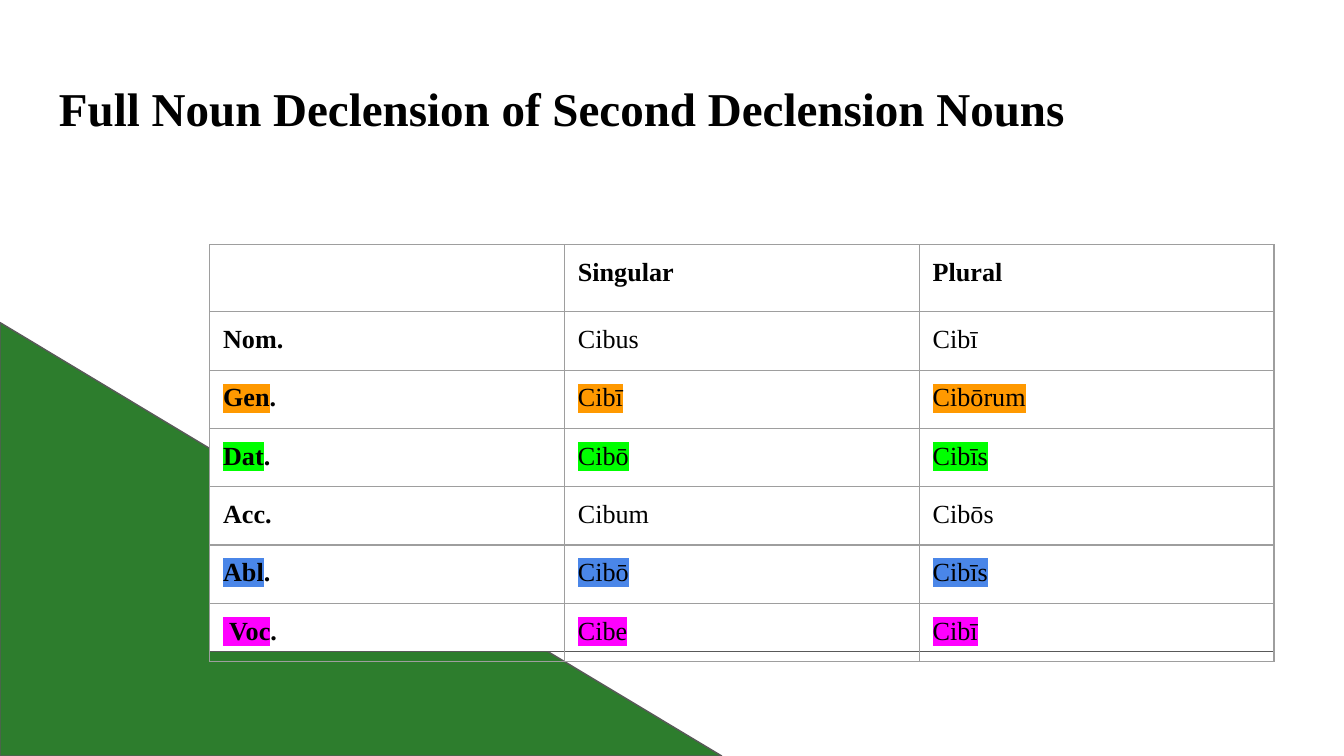
from dataclasses import dataclass
from typing import Optional

from lxml.etree import SubElement
from pptx import Presentation
from pptx.dml.color import RGBColor
from pptx.enum.shapes import MSO_SHAPE
from pptx.enum.text import MSO_ANCHOR
from pptx.oxml.ns import qn
from pptx.util import Emu, Inches, Pt

BLACK = RGBColor(0x00, 0x00, 0x00)
WHITE = RGBColor(0xFF, 0xFF, 0xFF)
FOREST = RGBColor(0x2D, 0x7D, 0x2D)
OUTLINE = RGBColor(0x59, 0x59, 0x59)
GRID = RGBColor(0x9E, 0x9E, 0x9E)
ORANGE = RGBColor(0xFF, 0x99, 0x00)
LIME = RGBColor(0x00, 0xFF, 0x00)
BLUE = RGBColor(0x4A, 0x86, 0xE8)
MAGENTA = RGBColor(0xFF, 0x00, 0xFF)

SLIDE_WIDTH = Inches(10)
SLIDE_HEIGHT = Emu(SLIDE_WIDTH * 9 // 16)
FONT = "Times New Roman"
LINE_WIDTH = Pt(0.75)
INSET = Inches(0.1)
COLUMN_WIDTH = Inches(2.64)
ROW_HEIGHT = Pt(30)
TABLE_LEFT, TABLE_TOP = Inches(1.56), Inches(1.82)
FRAME_SIDE = Inches(3.28)
HEADERS = ("", "Singular", "Plural")


@dataclass(frozen=True)
class Case:
    label: str
    singular: str
    plural: str
    highlight: Optional[RGBColor] = None


CASES = (
    Case("Nom", "Cibus", "Cibī"),
    Case("Gen", "Cibī", "Cibōrum", ORANGE),
    Case("Dat", "Cibō", "Cibīs", LIME),
    Case("Acc", "Cibum", "Cibōs"),
    Case("Abl", "Cibō", "Cibīs", BLUE),
    Case(" Voc", "Cibe", "Cibī", MAGENTA),
)


def add_text(paragraph, text: str, *, size: float = 14, bold: bool = False,
             highlight: Optional[RGBColor] = None) -> None:
    run = paragraph.add_run()
    run.text = text
    font = run.font
    font.size, font.bold = Pt(size), bold
    font.color.rgb = BLACK
    if highlight is not None:
        properties = run._r.get_or_add_rPr()
        marker = SubElement(properties, qn("a:highlight"))
        SubElement(marker, qn("a:srgbClr"), val=str(highlight))
    font.name = FONT


def format_empty(paragraph) -> None:
    properties = SubElement(paragraph._p, qn("a:endParaRPr"), sz="1800")
    SubElement(properties, qn("a:latin"), typeface=FONT)


def add_panel(slide, kind: MSO_SHAPE, left: Emu, top: Emu, width: Emu,
              height: Emu, fill: RGBColor) -> None:
    shape = slide.shapes.add_shape(kind, left, top, width, height)
    shape.shadow.inherit = False
    shape.fill.solid()
    shape.fill.fore_color.rgb = fill
    shape.line.color.rgb = OUTLINE
    shape.line.width = LINE_WIDTH


def add_title(slide, text: str) -> None:
    box = slide.shapes.add_textbox(Inches(0.34), Inches(0.49), Inches(9.32), Inches(0.63))
    frame = box.text_frame
    frame.word_wrap = True
    frame.vertical_anchor = MSO_ANCHOR.MIDDLE
    frame.margin_left = frame.margin_right = frame.margin_top = frame.margin_bottom = INSET
    add_text(frame.paragraphs[0], text, size=25.2, bold=True)


def format_cell(cell) -> None:
    cell.margin_left = cell.margin_right = cell.margin_top = cell.margin_bottom = INSET
    properties = cell._tc.get_or_add_tcPr()
    for side in ("lnL", "lnR", "lnT", "lnB"):
        border = SubElement(properties, qn(f"a:{side}"), w=str(LINE_WIDTH))
        fill = SubElement(border, qn("a:solidFill"))
        SubElement(fill, qn("a:srgbClr"), val=str(GRID))
    cell.fill.background()


def add_declension(slide) -> None:
    row_count, column_count = len(CASES) + 1, len(HEADERS)
    frame = slide.shapes.add_table(
        row_count, column_count, TABLE_LEFT, TABLE_TOP, FRAME_SIDE, FRAME_SIDE)
    table = frame.table
    table.first_row = table.horz_banding = False
    for column in table.columns:
        column.width = COLUMN_WIDTH
    for row in table.rows:
        row.height = ROW_HEIGHT
    frame.width = frame.height = FRAME_SIDE
    for cell in table.iter_cells():
        format_cell(cell)
    for column, header in enumerate(HEADERS):
        paragraph = table.cell(0, column).text_frame.paragraphs[0]
        if header:
            add_text(paragraph, header, bold=True)
        else:
            format_empty(paragraph)
    for row, case in enumerate(CASES, start=1):
        label, singular, plural = (
            table.cell(row, column).text_frame.paragraphs[0] for column in range(column_count))
        add_text(label, case.label, bold=True, highlight=case.highlight)
        add_text(label, ".", bold=True)
        add_text(singular, case.singular, highlight=case.highlight)
        add_text(plural, case.plural, highlight=case.highlight)


def main() -> None:
    presentation = Presentation()
    presentation.slide_width, presentation.slide_height = SLIDE_WIDTH, SLIDE_HEIGHT
    slide = presentation.slides.add_slide(presentation.slide_layouts[6])
    corner_top = Inches(2.4)
    add_panel(slide, MSO_SHAPE.RIGHT_TRIANGLE, Emu(0), corner_top,
              Inches(5.37), Emu(SLIDE_HEIGHT - corner_top), FOREST)
    add_panel(slide, MSO_SHAPE.RECTANGLE, TABLE_LEFT, TABLE_TOP,
              Emu(COLUMN_WIDTH * len(HEADERS)), Inches(3.03), WHITE)
    add_title(slide, "Full Noun Declension of Second Declension Nouns")
    add_declension(slide)
    presentation.save("out.pptx")


if __name__ == "__main__":
    main()
